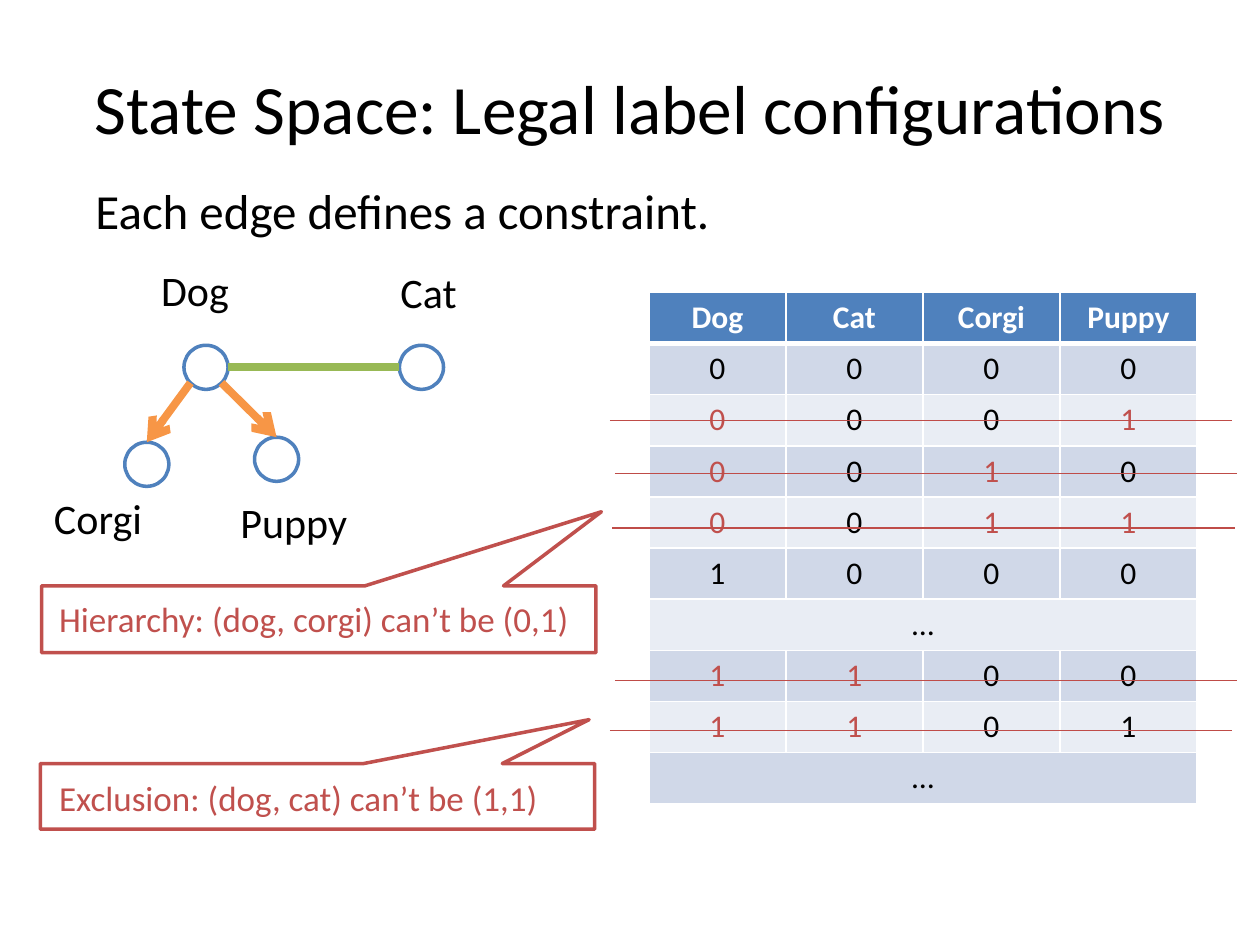
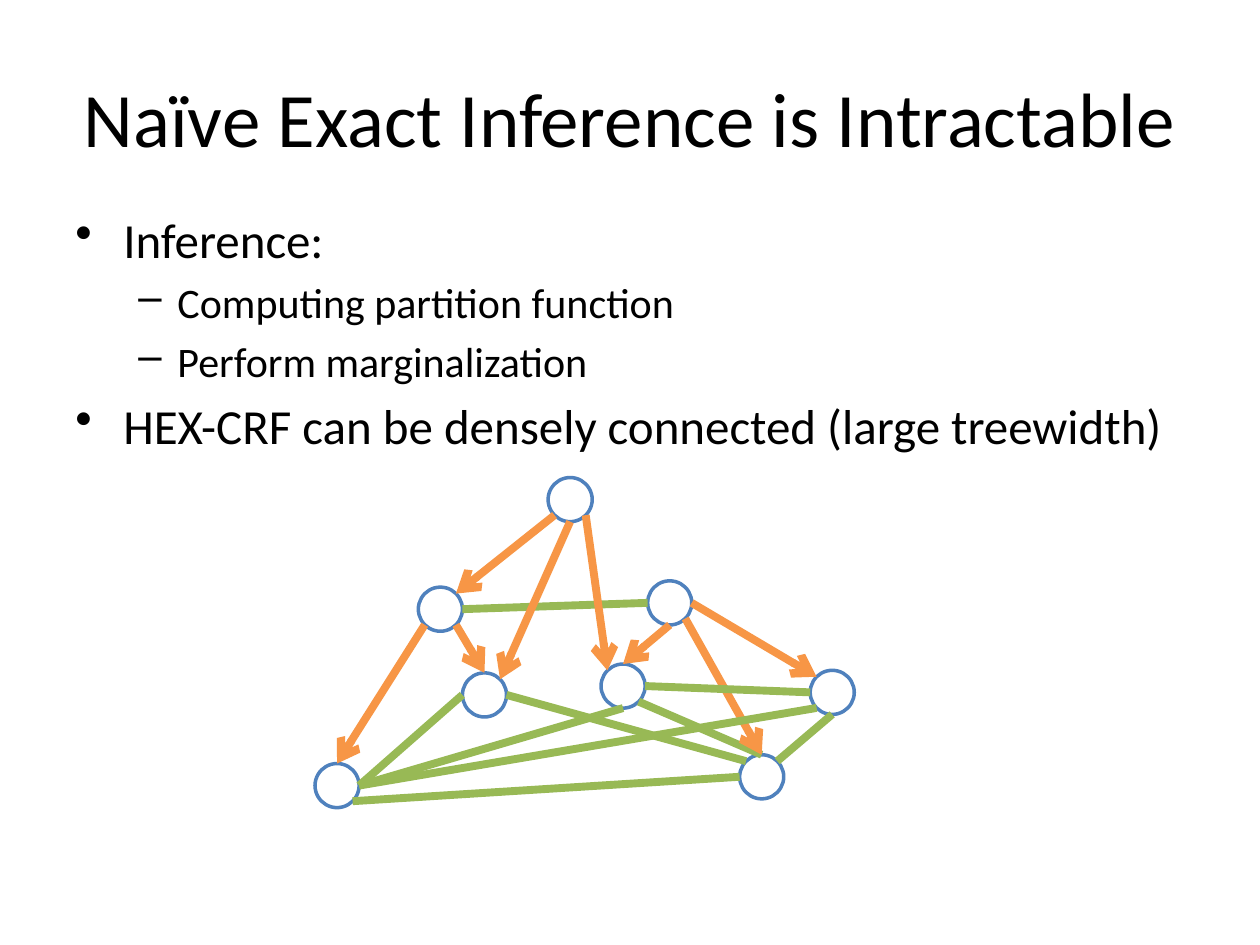
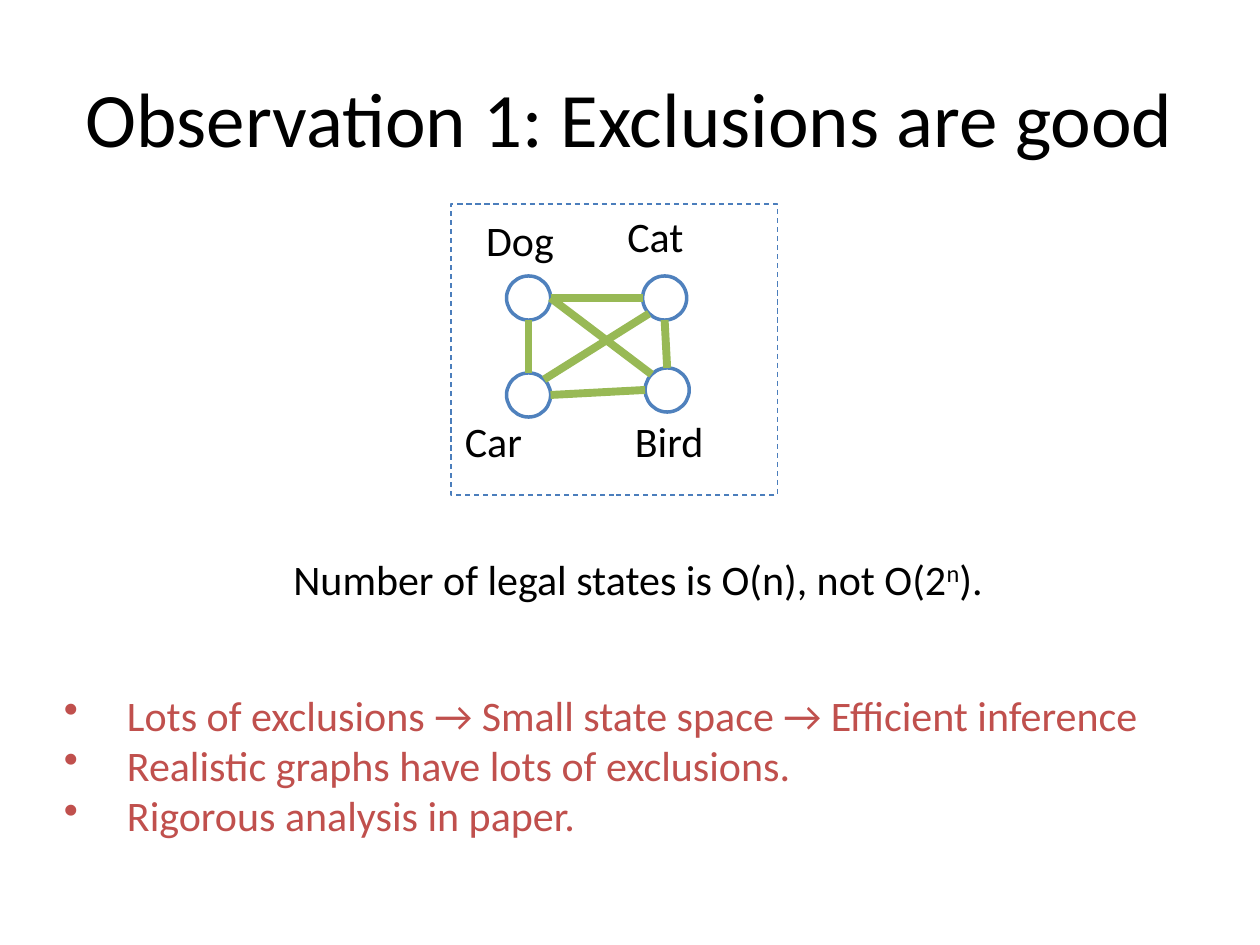
"""Build three slides on label graphs, their legal states and inference."""
from typing import NamedTuple, Optional

from lxml.etree import SubElement
from pptx import Presentation
from pptx.dml.color import RGBColor
from pptx.enum.dml import MSO_LINE
from pptx.enum.shapes import MSO_CONNECTOR, MSO_SHAPE
from pptx.enum.text import MSO_ANCHOR, PP_ALIGN
from pptx.oxml.ns import qn
from pptx.util import Emu, Pt

PX = 9144
FACE = "Calibri"
BLACK = RGBColor(0x00, 0x00, 0x00)
WHITE = RGBColor(0xFF, 0xFF, 0xFF)
BLUE = RGBColor(0x4F, 0x81, 0xBD)
FRAME = RGBColor(0x4B, 0x7E, 0xBC)
ORANGE = RGBColor(0xF7, 0x96, 0x46)
GREEN = RGBColor(0x98, 0xB9, 0x55)
RED = RGBColor(0xC0, 0x50, 0x4D)
STRIKE = RGBColor(0xBF, 0x4C, 0x48)
BANDS = (RGBColor(0xD0, 0xD8, 0xE8), RGBColor(0xE9, 0xED, 0xF4))
SIZE = 35
HALF = SIZE / 2
DIAG = HALF * 0.5 ** 0.5
SITES = {
    "n": (0, -HALF), "s": (0, HALF), "w": (-HALF, 0), "e": (HALF, 0),
    "nw": (-DIAG, -DIAG), "ne": (DIAG, -DIAG),
    "sw": (-DIAG, DIAG), "se": (DIAG, DIAG),
}


class Box(NamedTuple):
    left: int
    top: int
    width: int
    height: int


class Para(NamedTuple):
    text: str
    size: float = 24
    color: RGBColor = BLACK
    mark: str = ""
    level: int = 0
    margin: int = 0
    hang: int = 0
    before: float = 0
    align: Optional[PP_ALIGN] = None


class Edge(NamedTuple):
    start: str
    leave: str
    end: str
    enter: str
    arrow: bool = False


class Label(NamedTuple):
    text: str
    left: int
    top: int
    width: int = 152


class Callout(NamedTuple):
    text: str
    words: Box
    frame: Box
    tip: tuple[float, float]


Nodes = dict[str, tuple[int, int]]


def emu(px: float) -> Emu:
    """Turn px into EMU."""
    return Emu(round(px * PX))


def place(box: Box) -> list[Emu]:
    """Turn a box into EMU lengths."""
    return [emu(side) for side in box]


def add_mark(para, item: Para) -> None:
    """Give a paragraph its bullet and hanging indent."""
    props = para._p.get_or_add_pPr()
    props.set("marL", str(emu(item.margin)))
    props.set("indent", str(-emu(item.hang)))
    SubElement(props, qn("a:buChar")).set("char", item.mark)


def style(para, size: float, color: RGBColor, bold: bool = False) -> None:
    """Set the font of a whole paragraph."""
    font = para.font
    font.name, font.size, font.bold = FACE, Pt(size), bold
    font.color.rgb = color


def add_text(slide, box: Box, items: list[Para], anchor=MSO_ANCHOR.TOP):
    """Write paragraphs in a text box and return its frame."""
    frame = slide.shapes.add_textbox(*place(box)).text_frame
    frame.word_wrap = True
    frame.vertical_anchor = anchor
    for pos, item in enumerate(items):
        para = frame.add_paragraph() if pos else frame.paragraphs[0]
        if item.text:
            para.text = item.text
        if item.mark:
            add_mark(para, item)
        para.level = item.level
        para.alignment = item.align
        para.space_before = Pt(item.before)
        style(para, item.size, item.color)
    return frame


def add_slide(deck, title: str, top: int = 30, size: float = 44):
    """Add a blank slide with a centred title."""
    slide = deck.slides.add_slide(deck.slide_layouts[6])
    head = Para(title, size, align=PP_ALIGN.CENTER)
    add_text(slide, Box(50, top, 900, 125), [head], MSO_ANCHOR.MIDDLE)
    return slide


def add_shape(slide, kind, box: Box, color: RGBColor, width: float):
    """Add an outlined shape without fill or shadow."""
    shape = slide.shapes.add_shape(kind, *place(box))
    shape.shadow.inherit = False
    shape.fill.background()
    shape.line.color.rgb = color
    shape.line.width = Pt(width)
    return shape


def add_line(slide, start, end, color: RGBColor, width: float,
             arrow: bool = False) -> None:
    """Draw a straight line, with an arrowhead at its end if asked."""
    ends = [emu(value) for value in (*start, *end)]
    link = slide.shapes.add_connector(MSO_CONNECTOR.STRAIGHT, *ends)
    link.line.color.rgb = color
    link.line.width = Pt(width)
    if arrow:
        SubElement(link.line._get_or_add_ln(),
                   qn("a:tailEnd")).set("type", "arrow")
    SubElement(link._element.spPr, qn("a:effectLst"))


def site(nodes: Nodes, name: str, side: str) -> tuple[float, float]:
    """Find the point on the given side of a node."""
    left, top = nodes[name]
    across, down = SITES[side]
    return left + HALF + across, top + HALF + down


def add_graph(slide, nodes: Nodes, edges: list[Edge],
              labels: tuple[Label, ...] = ()) -> None:
    """Draw labels, nodes and the edges between them."""
    for label in labels:
        box = Box(label.left, label.top, label.width, 50)
        add_text(slide, box, [Para(label.text)])
    for left, top in nodes.values():
        box = Box(left, top, SIZE, SIZE)
        node = add_shape(slide, MSO_SHAPE.OVAL, box, BLUE, 2)
        node.fill.solid()
        node.fill.fore_color.rgb = WHITE
    for edge in edges:
        add_line(slide, site(nodes, edge.start, edge.leave),
                 site(nodes, edge.end, edge.enter),
                 ORANGE if edge.arrow else GREEN, 4.5, edge.arrow)


def add_border(cell, sides: dict[str, float]) -> None:
    """Draw white borders of the given widths round a cell."""
    props = cell._tc.get_or_add_tcPr()
    for pos, (side, width) in enumerate(sides.items()):
        line = SubElement(props, qn(f"a:ln{side}"), w=str(Pt(width)))
        fill = SubElement(line, qn("a:solidFill"))
        SubElement(fill, qn("a:srgbClr")).set("val", str(WHITE))
        props.insert(pos, line)


def find_bad(row: str) -> set[int]:
    """Find the columns of a state that break a constraint."""
    if len(row) < 4:
        return set()
    if row[0] == "1":
        return {0, 1} if row[1] == "1" else set()
    kids = {col for col in (2, 3) if row[col] == "1"}
    return kids | {0} if kids else kids


def add_states(slide, box: Box, heads: list[str], rows: list[str]) -> None:
    """Add the table of states, with broken constraints in red."""
    count = len(heads)
    table = slide.shapes.add_table(len(rows) + 1, count, *place(box)).table
    table.first_row = table.horz_banding = False
    for num, row in enumerate([heads, *rows]):
        head = num == 0
        bad = set() if head else find_bad(row)
        for col in range(count):
            cell = table.cell(num, col)
            cell.fill.solid()
            cell.fill.fore_color.rgb = BLUE if head else BANDS[(num - 1) % 2]
            add_border(cell, {"L": 1, "R": 1, "T": 3 if num == 1 else 1,
                              "B": 3 if head else 1})
            if col < len(row):
                para = cell.text_frame.paragraphs[0]
                para.text = row[col]
                para.alignment = PP_ALIGN.CENTER
                tint = WHITE if head else RED if col in bad else BLACK
                style(para, 18, tint, head)
        if len(row) == 1:
            table.cell(num, 0).merge(table.cell(num, count - 1))


def add_callout(slide, note: Callout) -> None:
    """Add a red callout and its words."""
    add_text(slide, note.words, [Para(note.text, 20, RED)])
    shape = add_shape(slide, MSO_SHAPE.RECTANGULAR_CALLOUT, note.frame, RED, 2)
    shape.adjustments[0], shape.adjustments[1] = note.tip


def build_space(deck) -> None:
    """Build the slide on legal label configurations."""
    slide = add_slide(deck, "State Space: Legal label configurations", 22, 39.6)
    nodes = {"dog": (146, 274), "corgi": (99, 351),
             "puppy": (202, 347), "cat": (317, 274)}
    edges = [Edge("dog", "sw", "corgi", "n", True),
             Edge("dog", "se", "puppy", "n", True),
             Edge("dog", "e", "cat", "w")]
    labels = (Label("Corgi", 33, 386), Label("Puppy", 181, 389),
              Label("Dog", 118, 205), Label("Cat", 308, 207))
    add_graph(slide, nodes, edges, labels)
    add_states(slide, Box(515, 232, 435, 406),
               ["Dog", "Cat", "Corgi", "Puppy"],
               ["0000", "0001", "0010", "0011", "1000", "…",
                "1100", "1101", "…"])
    for left, top in ((484, 334), (488, 376), (488, 540),
                      (486, 419), (484, 580)):
        add_line(slide, (left, top), (left + 494, top), STRIKE, 0.75)
    add_callout(slide, Callout("Exclusion: (dog, cat) can’t be (1,1)",
                               Box(37, 611, 481, 44), Box(32, 606, 440, 52),
                               (0.49, -1.17)))
    add_callout(slide, Callout("Hierarchy: (dog, corgi) can’t be (0,1)",
                               Box(37, 469, 455, 44), Box(33, 465, 440, 53),
                               (0.51, -1.61)))
    add_text(slide, Box(66, 138, 524, 57),
             [Para("Each edge defines a constraint.", 28)])


def build_dense(deck) -> None:
    """Build the slide on naïve inference."""
    slide = add_slide(deck, "Naïve Exact Inference is Intractable")
    main = Para("Inference:", 28, mark="•", margin=38, hang=38, before=5.6)
    sub = Para("Computing partition function", mark="–", level=1,
               margin=81, hang=31, before=4.8)
    add_text(slide, Box(50, 161, 1009, 205), [
        main, sub, sub._replace(text="Perform marginalization"),
        main._replace(
            text="HEX-CRF can be densely connected (large treewidth)")])
    nodes = {"top": (435, 379), "left": (332, 466), "right": (514, 461),
             "inner": (367, 534), "mid": (477, 527), "far": (643, 532),
             "low": (250, 606), "base": (587, 599)}
    edges = [
        Edge("left", "sw", "low", "n", True),
        Edge("left", "se", "inner", "n", True),
        Edge("right", "s", "mid", "n", True),
        Edge("low", "e", "inner", "w"),
        Edge("base", "w", "low", "se"),
        Edge("base", "nw", "inner", "e"),
        Edge("mid", "se", "base", "n"),
        Edge("right", "se", "base", "n", True),
        Edge("right", "w", "left", "e"),
        Edge("top", "sw", "left", "ne", True),
        Edge("top", "se", "mid", "nw", True),
        Edge("top", "s", "inner", "ne", True),
        Edge("mid", "e", "far", "w"),
        Edge("base", "ne", "far", "s"),
        Edge("right", "e", "far", "nw", True),
        Edge("mid", "s", "low", "e"),
        Edge("far", "sw", "low", "e"),
    ]
    add_graph(slide, nodes, edges)


def build_good(deck) -> None:
    """Build the slide on the worth of exclusions."""
    slide = add_slide(deck, "Observation 1: Exclusions are good")
    nodes = {"dog": (402, 219), "car": (402, 296),
             "bird": (512, 292), "cat": (510, 219)}
    edges = [Edge("dog", "e", "cat", "w"), Edge("dog", "s", "car", "n"),
             Edge("bird", "w", "car", "e"), Edge("bird", "n", "cat", "s"),
             Edge("dog", "e", "bird", "nw"), Edge("car", "ne", "cat", "sw")]
    labels = (Label("Car", 359, 325, 72), Label("Bird", 494, 325),
              Label("Dog", 376, 165), Label("Cat", 488, 162))
    add_graph(slide, nodes, edges, labels)
    frame = add_shape(slide, MSO_SHAPE.RECTANGLE, Box(358, 162, 259, 231),
                      FRAME, 0.75)
    frame.line.dash_style = MSO_LINE.DASH
    points = ("Lots of exclusions → Small state space → Efficient inference",
              "Realistic graphs have lots of exclusions.",
              "Rigorous analysis in paper.")
    add_text(slide, Box(41, 542, 977, 131),
             [Para(text, color=RED, mark="•", margin=50, hang=50)
              for text in points])
    count = add_text(slide, Box(223, 434, 575, 50), [Para("")]).paragraphs[0]
    for text, base in (("Number of legal states is O(n), not O(2", 0),
                       ("n", 30000), (").", 0)):
        run = count.add_run()
        run.text = text
        if base:
            run._r.get_or_add_rPr().set("baseline", str(base))


def main() -> None:
    """Build and save the deck."""
    deck = Presentation()
    deck.slide_width, deck.slide_height = emu(1000), emu(750)
    for build in (build_space, build_dense, build_good):
        build(deck)
    deck.save("out.pptx")


if __name__ == "__main__":
    main()
